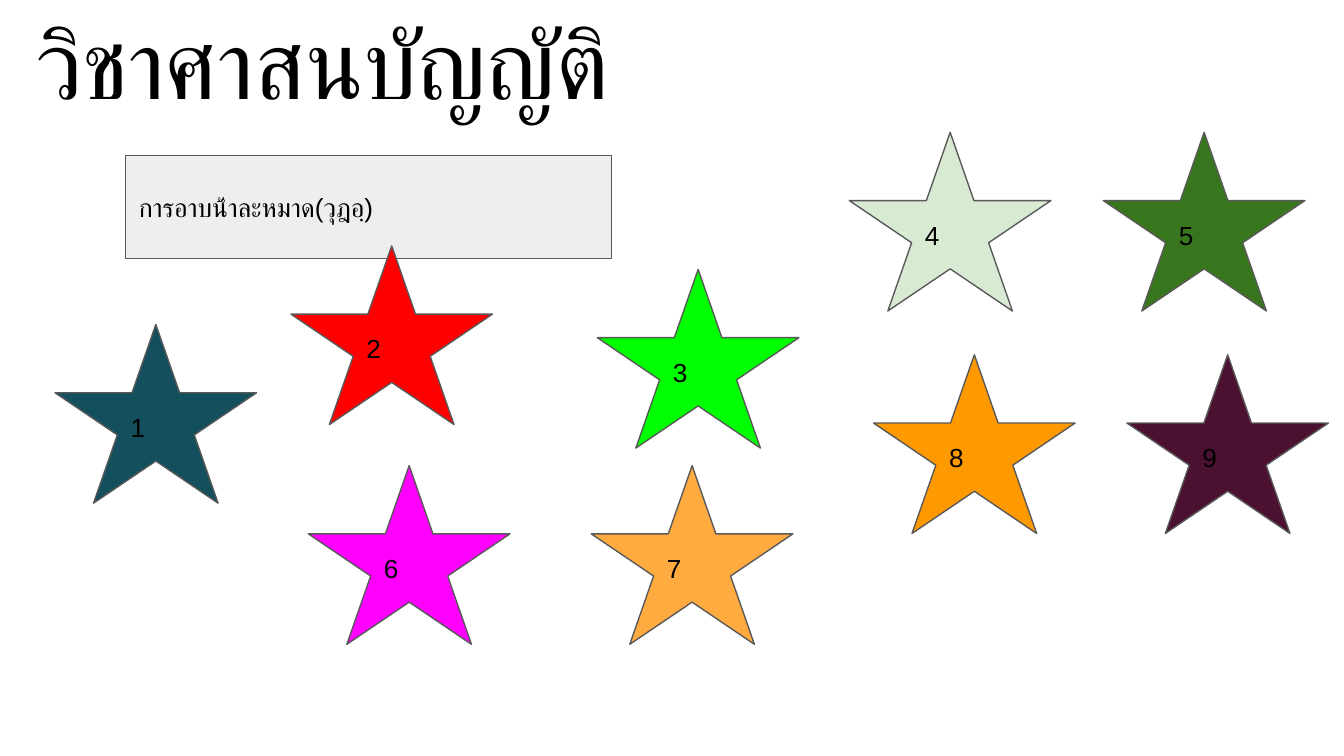
from lxml import etree
from pptx import Presentation, util as u
from pptx.dml.color import RGBColor
from pptx.enum import shapes, text
from pptx.oxml import ns

PX = 4572
COLORS = {
    "ink": "000000", "outline": "595959", "panel": "EEEEEE",
    "magenta": "FF00FF", "red": "FF0000", "apricot": "FFAB40",
    "lime": "00FF00", "orange": "FF9900", "plum": "4C1130",
    "mint": "D9EAD3", "green": "38761D", "teal": "134F5C",
}
STARS = [
    (6, 459, 693, "magenta"),
    (2, 433, 366, "red"),
    (7, 880, 693, "apricot"),
    (3, 889, 401, "lime"),
    (8, 1300, 528, "orange"),
    (9, 1677, 528, "plum"),
    (4, 1264, 197, "mint"),
    (5, 1642, 197, "green"),
    (1, 82, 483, "teal"),
]


def px(*lengths):
    return [u.Emu(length * PX) for length in lengths]


def color(name):
    return RGBColor.from_string(COLORS[name])


def write(frame, words, size=14, anchor=text.MSO_ANCHOR.MIDDLE, font="Arial", ink="ink"):
    frame.word_wrap = True
    frame.auto_size = text.MSO_AUTO_SIZE.NONE
    frame.vertical_anchor = anchor
    inset, = px(20)
    frame.margin_left = frame.margin_top = inset
    frame.margin_right = frame.margin_bottom = inset
    paragraph = frame.paragraphs[0]
    paragraph.alignment = text.PP_ALIGN.LEFT
    run = paragraph.add_run()
    run.text = words
    run.font.size = u.Pt(size)
    run.font.color.rgb = color(ink)
    run.font.name = font
    etree.SubElement(run.font._element, ns.qn("a:cs"), typeface=font)


class Lesson:
    def __init__(self, deck):
        self.slide = deck.slides.add_slide(deck.slide_layouts[0])
        subtitle = self.slide.placeholders[1].element
        subtitle.getparent().remove(subtitle)

    def title(self, words, left, top, width, height):
        heading = self.slide.shapes.title
        heading.left, heading.top, heading.width, heading.height = px(left, top, width, height)
        write(heading.text_frame, words, size=52, anchor=text.MSO_ANCHOR.BOTTOM)

    def block(self, kind, words, fill, left, top, width, height):
        block = self.slide.shapes.add_shape(kind, *px(left, top, width, height))
        block.shadow.inherit = False
        block.fill.solid()
        block.fill.fore_color.rgb = color(fill)
        block.line.color.rgb = color("outline")
        block.line.width = u.Pt(0.75)
        write(block.text_frame, words)

    def topic(self, words, *box):
        self.block(shapes.MSO_SHAPE.RECTANGLE, words, "panel", *box)

    def star(self, number, left, top, fill):
        self.block(shapes.MSO_SHAPE.STAR_5_POINT, str(number), fill, left, top, 300, 266)


def main():
    deck = Presentation()
    deck.slide_width, deck.slide_height = px(2000, 1125)
    lesson = Lesson(deck)
    lesson.title("วิชาศาสนบัญญัติ", 34, 23, 1056, 174)
    lesson.topic("การอาบน้ําละหมาด(วุฎอฺ)", 187, 231, 723, 154)
    for star in STARS:
        lesson.star(*star)
    deck.save("out.pptx")


if __name__ == "__main__":
    main()
